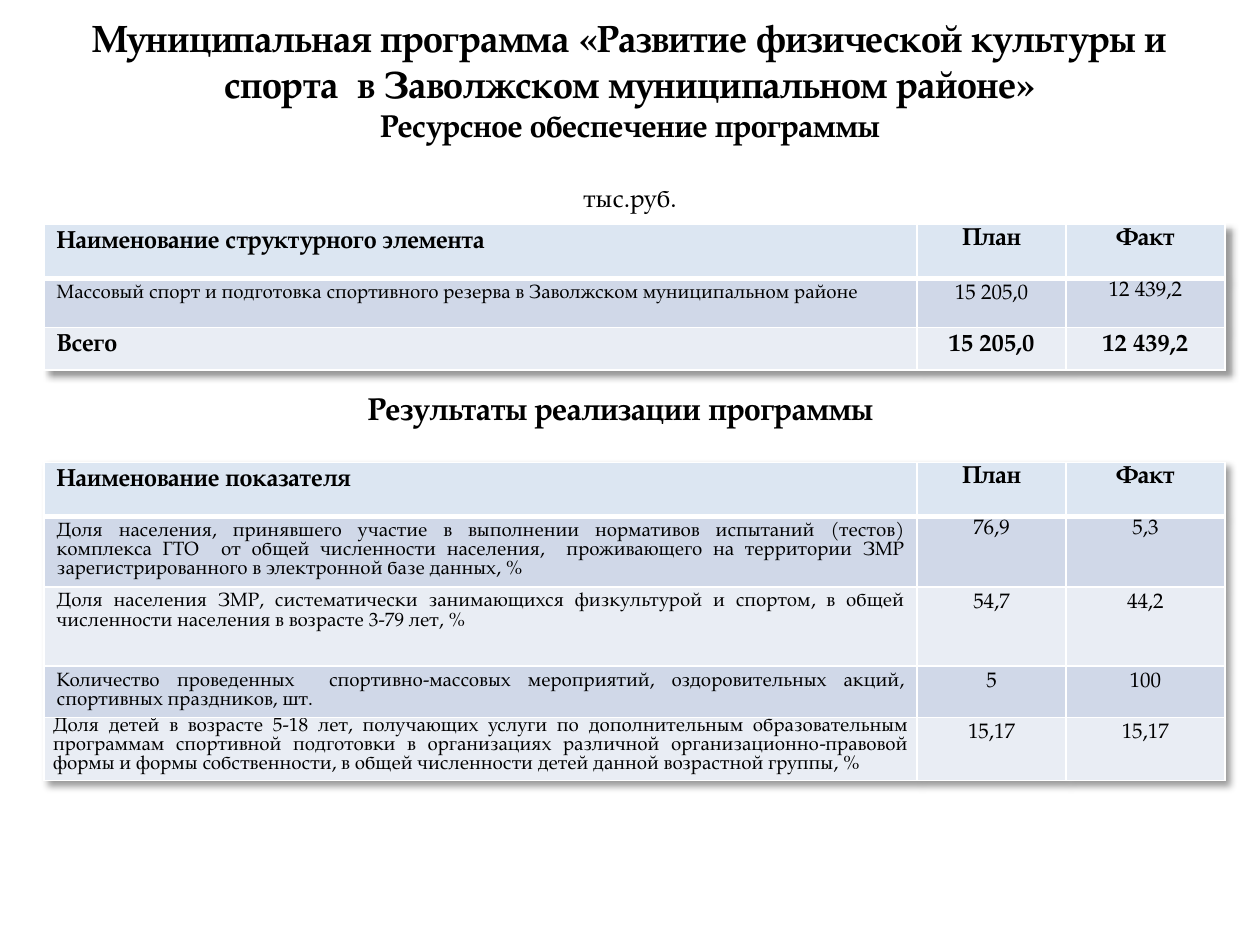
from dataclasses import dataclass

from lxml import etree
from pptx import Presentation
from pptx import util as u
from pptx.dml.color import RGBColor
from pptx.enum import text
from pptx.oxml import ns

BLACK = RGBColor(0x00, 0x00, 0x00)
WHITE = RGBColor(0xFF, 0xFF, 0xFF)
HEADER_BLUE = RGBColor(0xDC, 0xE6, 0xF2)
BAND_FILLS = (RGBColor(0xD0, 0xD8, 0xE8), RGBColor(0xE9, 0xED, 0xF4))
FONT = "TeX Gyre Pagella"

LEFT, CENTER, JUSTIFY = (
    text.PP_ALIGN.LEFT, text.PP_ALIGN.CENTER, text.PP_ALIGN.JUSTIFY)
COLUMN_WIDTHS = (17.6, 3.0, 3.2)
TABLE_LEFT = 0.89
TIGHT_MARGINS = {"margin_left": u.Cm(0.18), "margin_right": u.Cm(0.18),
                 "margin_top": 0, "margin_bottom": 0}


@dataclass(frozen=True)
class CellText:
    words: str
    size: float
    bold: bool = False
    align: text.PP_ALIGN = CENTER
    tight: bool = False    # narrow margins
    loose: bool = False    # 1.15 line spacing


@dataclass(frozen=True)
class Row:
    height: float
    cells: tuple[CellText, ...]


def header(label: str) -> Row:
    amounts = (CellText(name, 14, True, tight=True, loose=True)
               for name in ("План", "Факт"))
    return Row(1.09, (CellText(label, 14, True, LEFT), *amounts))


def indicator(height: float, label: str, plan: str, fact: str,
              tight_label: bool = False, loose: bool = False) -> Row:
    values = (CellText(v, 12, tight=loose, loose=loose) for v in (plan, fact))
    return Row(height, (CellText(label, 11, False, JUSTIFY, tight_label), *values))


def write(paragraph, words: str, size: float, bold: bool, align) -> None:
    paragraph.alignment = align
    run = paragraph.add_run()
    run.text = words
    style = {"name": FONT, "size": u.Pt(size), "bold": bold}
    for attribute, value in style.items():
        setattr(run.font, attribute, value)
    run.font.color.rgb = BLACK


def add_borders(cell, is_header: bool) -> None:
    properties = cell._tc.get_or_add_tcPr()
    for side in "LRTB":
        width = 3 if is_header and side == "B" else 1
        line = etree.SubElement(properties, ns.qn(f"a:ln{side}"), w=str(u.Pt(width)))
        fill = etree.SubElement(line, ns.qn("a:solidFill"))
        etree.SubElement(fill, ns.qn("a:srgbClr"), val=str(WHITE))


def add_shadow(table) -> None:
    effects = etree.Element(ns.qn("a:effectLst"))
    shadow = etree.SubElement(
        effects, ns.qn("a:outerShdw"), blurRad=str(u.Pt(4)), dist=str(u.Pt(4)),
        dir="2700000", algn="tl", rotWithShape="0")
    color = etree.SubElement(shadow, ns.qn("a:srgbClr"), val=str(BLACK))
    etree.SubElement(color, ns.qn("a:alpha"), val="40000")
    table._tbl.tblPr.insert(0, effects)


def fill_cell(cell, content: CellText, row_index: int) -> None:
    add_borders(cell, row_index == 0)
    cell.fill.solid()
    cell.fill.fore_color.rgb = (
        BAND_FILLS[(row_index - 1) % 2] if row_index else HEADER_BLUE)
    if content.tight:
        for attribute, value in TIGHT_MARGINS.items():
            setattr(cell, attribute, value)
    paragraph = cell.text_frame.paragraphs[0]
    paragraph.line_spacing = 1.15 if content.loose else u.Pt(content.size)
    write(paragraph, content.words, content.size, content.bold, content.align)


def add_table(slide, top: float, rows: tuple[Row, ...]) -> None:
    table = slide.shapes.add_table(
        len(rows), len(COLUMN_WIDTHS), u.Cm(TABLE_LEFT), u.Cm(top),
        u.Cm(sum(COLUMN_WIDTHS)), u.Cm(sum(row.height for row in rows))).table
    add_shadow(table)
    for column, width in zip(table.columns, COLUMN_WIDTHS):
        column.width = u.Cm(width)
    for i, row in enumerate(rows):
        table.rows[i].height = u.Cm(row.height)
        for j, content in enumerate(row.cells):
            fill_cell(table.cell(i, j), content, i)


RESOURCES = (
    header("Наименование структурного элемента"),
    Row(0.99, (
        CellText("Массовый спорт и подготовка спортивного резерва "
                 "в Заволжском муниципальном районе", 11, align=LEFT),
        CellText("15 205,0", 12),
        CellText("12 439,2", 12, tight=True, loose=True))),
    Row(0.86, (
        CellText("Всего", 14, True, LEFT),
        CellText("15 205,0", 14, True),
        CellText("12 439,2", 14, True))),
)

RESULTS = (
    header("Наименование показателя"),
    indicator(0.99, "Доля населения, принявшего участие в выполнении нормативов "
              "испытаний (тестов) комплекса ГТО  от общей численности населения,  "
              "проживающего на территории ЗМР зарегистрированного в электронной "
              "базе данных, %", "76,9", "5,3", loose=True),
    indicator(1.6, "Доля населения ЗМР, систематически занимающихся физкультурой "
              "и спортом, в общей численности населения в возрасте 3-79 лет, %",
              "54,7", "44,2"),
    indicator(0.84, "Количество проведенных  спортивно-массовых мероприятий, "
              "оздоровительных акций, спортивных праздников, шт.", "5", "100"),
    indicator(1.27, "Доля детей в возрасте 5-18 лет, получающих услуги по "
              "дополнительным образовательным программам спортивной подготовки "
              "в организациях различной организационно-правовой формы и формы "
              "собственности, в общей численности детей данной возрастной группы, %",
              "15,17", "15,17", tight_label=True),
)

# Heading lines: words, size, bold, space before
HEADING = (
    ("Муниципальная программа «Развитие физической культуры и спорта  "
     "в Заволжском муниципальном районе»", 21.6, True, 0),
    ("Ресурсное обеспечение программы", 18, True, 0),
    ("тыс.руб.", 14.4, False, 22),
)


def add_heading(slide) -> None:
    title = slide.shapes.title
    place = {"left": u.Cm(1.27), "top": u.Cm(0.3),
             "width": u.Cm(22.86), "height": u.Cm(4.1)}
    for attribute, value in place.items():
        setattr(title, attribute, value)
    frame = title.text_frame
    layout = {"vertical_anchor": text.MSO_ANCHOR.TOP, "margin_top": 0,
              "margin_bottom": 0, "auto_size": text.MSO_AUTO_SIZE.NONE}
    for attribute, value in layout.items():
        setattr(frame, attribute, value)
    for i, (words, size, bold, gap) in enumerate(HEADING):
        paragraph = frame.add_paragraph() if i else frame.paragraphs[0]
        paragraph.space_before = u.Pt(gap)
        write(paragraph, words, size, bold, CENTER)


def main() -> None:
    deck = Presentation()
    deck.slide_width, deck.slide_height = u.Cm(25.4), u.Cm(19.05)
    slide = deck.slides.add_slide(deck.slide_layouts[5])

    add_heading(slide)
    add_table(slide, 4.52, RESOURCES)
    add_table(slide, 9.32, RESULTS)

    # Heading of the results table
    results_heading = slide.shapes.add_textbox(
        u.Cm(3.91), u.Cm(7.72), u.Cm(17.2), u.Cm(1.02)).text_frame
    results_heading.word_wrap = True
    write(results_heading.paragraphs[0], "Результаты реализации программы",
          18, True, CENTER)

    deck.save("out.pptx")


if __name__ == "__main__":
    main()
